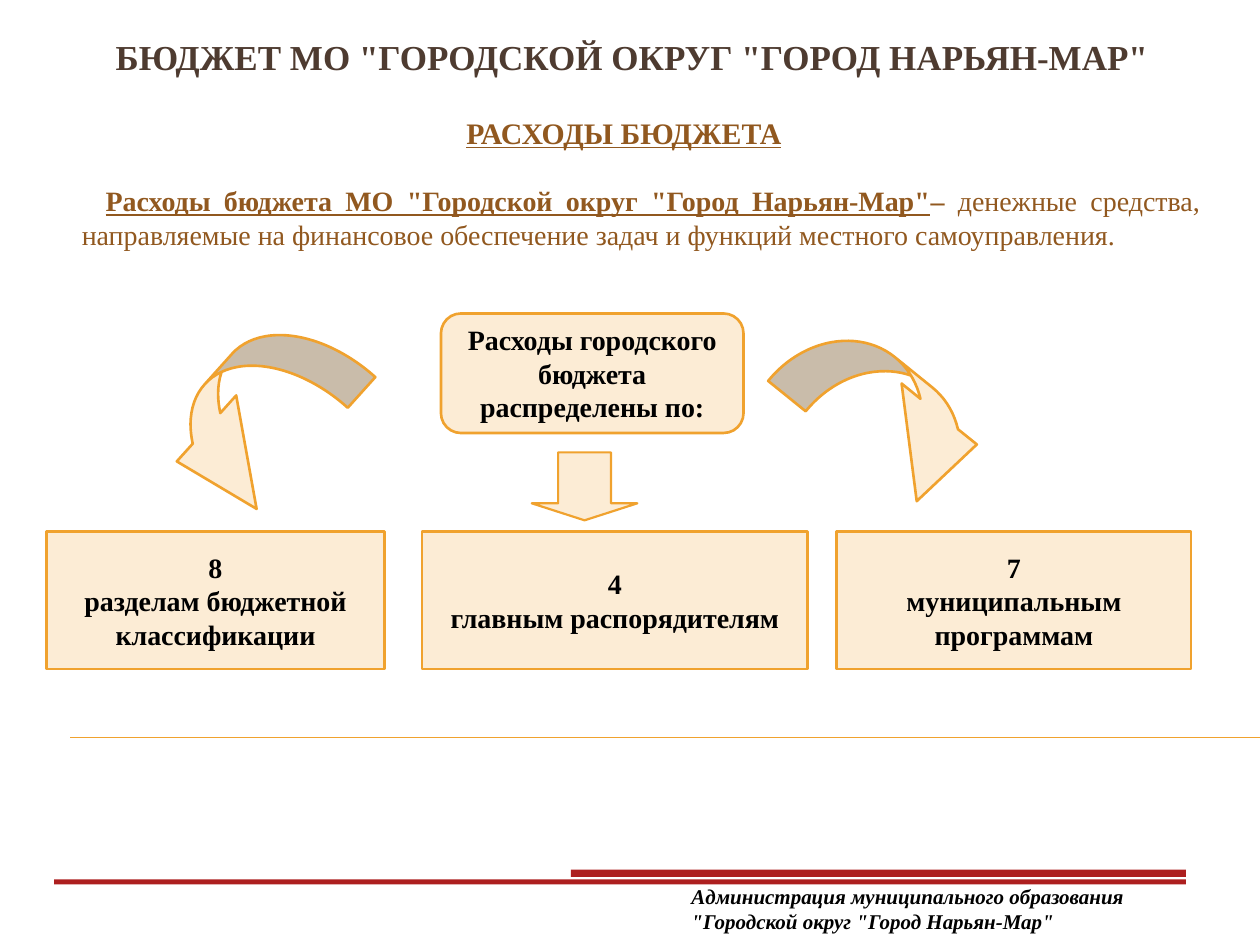
from lxml import etree
from pptx import Presentation
from pptx import util as u
from pptx.dml.color import RGBColor
from pptx.enum import shapes, text
from pptx.oxml.ns import qn

FONT = "Times New Roman"
BROWN = RGBColor(0x4E, 0x3B, 0x30)
OCHRE = RGBColor(0x91, 0x58, 0x1F)
ORANGE = RGBColor(0xF0, 0xA2, 0x2E)
CREAM = RGBColor(0xFC, 0xEC, 0xD5)
RED = RGBColor(0xAD, 0x1F, 0x1F)
BLACK = RGBColor(0, 0, 0)

SHAPE = shapes.MSO_SHAPE
ALIGN = text.PP_ALIGN
ANCHOR = text.MSO_ANCHOR


class SlideBuilder:
    def __init__(self, presentation):
        self.slide = presentation.slides.add_slide(presentation.slide_layouts[5])

    def set_lines(self, frame, lines, size, color, align, italic=False, underline=False):
        """Fill a text frame with bold paragraphs."""
        frame.word_wrap = True
        frame.text = "\n".join(lines)
        for paragraph in frame.paragraphs:
            paragraph.alignment = align
            for run in paragraph.runs:
                self.format_run(run, size, color, True, italic, underline)

    def format_run(self, run, size, color, bold, italic=False, underline=False):
        font = run.font
        font.name, font.size, font.color.rgb = FONT, u.Pt(size), color
        font.bold, font.italic, font.underline = bold, italic, underline

    def title(self, line, left, top, width, height):
        title = self.slide.shapes.title
        title.left, title.top = u.Cm(left), u.Cm(top)
        title.width, title.height = u.Cm(width), u.Cm(height)
        self.set_lines(title.text_frame, [line], 20, BROWN, ALIGN.CENTER)
        title.text_frame.vertical_anchor = ANCHOR.TOP
        title.text_frame.auto_size = text.MSO_AUTO_SIZE.NONE

    def text_box(self, box, line, size, color, align, **style):
        shape = self.slide.shapes.add_textbox(*map(u.Cm, box))
        self.set_lines(shape.text_frame, [line], size, color, align, **style)
        return shape.text_frame.paragraphs[0]

    def shape(self, kind, box, adjustments=(), rotation=0,
              fill=CREAM, line=ORANGE, line_width=1.5):
        shape = self.slide.shapes.add_shape(kind, *map(u.Cm, box))
        shape.shadow.inherit = False
        shape.rotation = rotation
        for index, value in enumerate(adjustments):
            shape.adjustments[index] = value
        shape.fill.solid()
        shape.fill.fore_color.rgb = fill
        if line is None:
            shape.line.fill.background()
        else:
            shape.line.color.rgb = line
            shape.line.width = u.Pt(line_width)
        return shape

    def label_box(self, kind, box, lines, margin_x, margin_y, adjustments=()):
        frame = self.shape(kind, box, adjustments).text_frame
        self.set_lines(frame, lines, 16, BLACK, ALIGN.CENTER)
        frame.vertical_anchor = ANCHOR.MIDDLE
        frame.margin_left = frame.margin_right = u.Cm(margin_x)
        frame.margin_top = frame.margin_bottom = u.Cm(margin_y)

    def rule(self, left, right, y):
        connector = self.slide.shapes.add_connector(
            shapes.MSO_CONNECTOR.STRAIGHT, u.Cm(left), u.Cm(y), u.Cm(right), u.Cm(y))
        connector.line.color.rgb = ORANGE
        connector.line.width = u.Pt(0.75)
        etree.SubElement(connector._element.spPr, qn("a:effectLst"))


def main():
    presentation = Presentation()
    presentation.slide_width, presentation.slide_height = u.Cm(25.4), u.Cm(19.05)
    builder = SlideBuilder(presentation)

    builder.rule(1.42, 25.4, 14.86)
    builder.title('БЮДЖЕТ МО "ГОРОДСКОЙ ОКРУГ "ГОРОД НАРЬЯН-МАР"', 0.99, 0.58, 23.5, 3.4)
    builder.text_box((0.58, 2.18, 24, 1.19), "РАСХОДЫ БЮДЖЕТА", 17, OCHRE,
                     ALIGN.CENTER, underline=True)

    definition = builder.text_box(
        (1.4, 3.58, 23.04, 2.18),
        'Расходы бюджета МО "Городской округ "Город Нарьян-Мар"',
        16, OCHRE, ALIGN.JUSTIFY, underline=True)
    definition.space_before = u.Pt(4)
    definition._p.get_or_add_pPr().set("indent", str(u.Cm(0.48)))
    for words, bold in (
            ("– ", True),
            ("денежные средства, направляемые на финансовое обеспечение "
             "задач и функций местного самоуправления.", False)):
        run = definition.add_run()
        run.text = words
        builder.format_run(run, 16, OCHRE, bold)

    builder.label_box(SHAPE.ROUNDED_RECTANGLE, (8.89, 6.32, 6.1, 2.41),
                      ["Расходы городского бюджета распределены по:"],
                      0.36, 0.13, [0.167])
    for left, width, lines in (
            (0.94, 6.81, ["8", "разделам бюджетной классификации"]),
            (8.51, 7.77, ["4", "главным распорядителям"]),
            (16.87, 7.14, ["7", "муниципальным программам"])):
        builder.label_box(SHAPE.RECTANGLE, (left, 10.72, width, 2.77), lines, 0.3, 0)

    builder.shape(SHAPE.CURVED_UP_ARROW, (2.92, 7.21, 4.47, 2.46),
                  (0.338, 0.727, 0.747), rotation=132)
    builder.shape(SHAPE.CURVED_DOWN_ARROW, (15.57, 7.44, 4.83, 1.98),
                  (0.492, 0.986, 0.834), rotation=39)
    builder.shape(SHAPE.DOWN_ARROW, (10.72, 9.12, 2.13, 1.37), (0.5, 0.25),
                  line_width=1.25)

    for bar in ((11.51, 17.53, 12.4, 0.15), (1.09, 17.73, 22.82, 0.1)):
        builder.shape(SHAPE.RECTANGLE, bar, fill=RED, line=None)
    builder.text_box(
        (13.69, 17.68, 9.8, 1.27),
        'Администрация муниципального образования "Городской округ "Город Нарьян-Мар"',
        12, BLACK, ALIGN.LEFT, italic=True)

    presentation.save("out.pptx")


if __name__ == "__main__":
    main()
